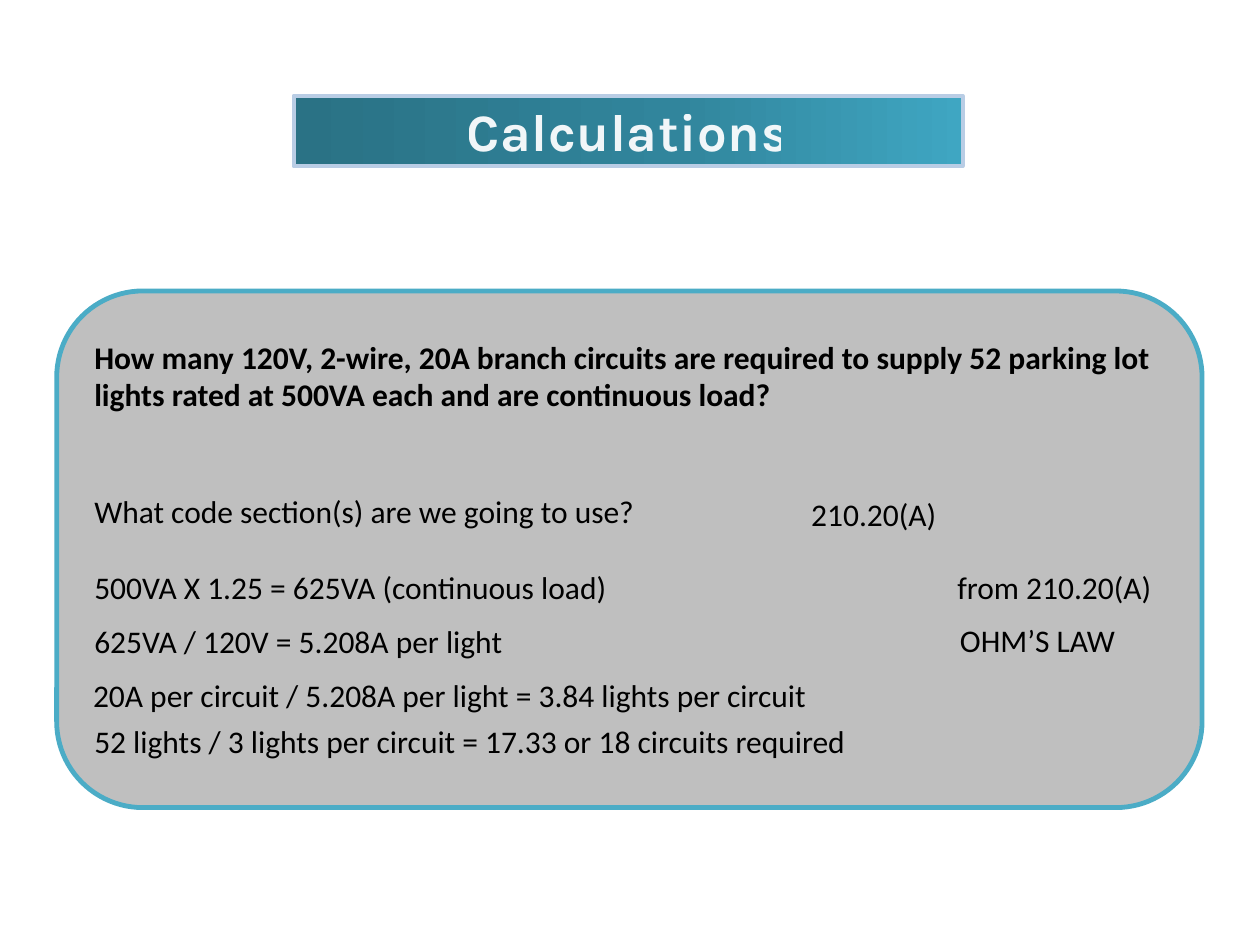
"""Build the branch circuit calculation slide."""
from copy import deepcopy
from typing import NamedTuple

from lxml.etree import SubElement
from pptx import Presentation
from pptx.dml.color import RGBColor
from pptx.enum.shapes import MSO_SHAPE as Preset
from pptx.enum.text import MSO_ANCHOR as Anchor, MSO_AUTO_SIZE as AutoSize, PP_ALIGN as Align
from pptx.oxml.ns import qn
from pptx.util import Inches, Pt


class Note(NamedTuple):
    """A line of the worked answer and its place in inches."""
    text: str
    left: float
    top: float
    width: float
    height: float = 0.4
    bold: bool = False
    wrap: bool = True


NOTES = [
    Note("How many 120V, 2-wire, 20A branch circuits are required to supply 52 parking lot "
         "lights rated at 500VA each and are continuous load?", 0.65, 2.63, 8.67, 0.71, bold=True),
    Note("What code section(s) are we going to use?", 0.65, 3.86, 5.29),
    Note("210.20(A)", 6.34, 3.88, 3.2),
    Note("500VA X 1.25 = 625VA (continuous load)", 0.65, 4.46, 4.85),
    Note("from 210.20(A)", 7.5, 4.46, 1.9, wrap=False),
    Note("625VA / 120V = 5.208A per light", 0.65, 4.89, 6.62),
    Note("OHM’S LAW", 7.52, 4.88, 1.62, wrap=False),
    Note("20A per circuit / 5.208A per light = 3.84 lights per circuit", 0.64, 5.32, 7.43),
    Note("52 lights / 3 lights per circuit = 17.33 or 18 circuits required", 0.65, 5.68, 7.23),
]
BANNER_STOPS = [(0.01, "2A7285"), (0.57, "31859C"), (1, "3FA6C2")]


def color(value: str) -> RGBColor:
    """Turn a hex string into a colour."""
    return RGBColor.from_string(value)


def style_line(shape, value: str, width: float) -> None:
    """Set the outline colour and width of a shape."""
    shape.line.color.rgb = color(value)
    shape.line.width = Pt(width)


def style_font(font, name: str, size: float, value: str, bold: bool) -> None:
    """Set the face, size, colour and weight of a font."""
    font.name, font.size, font.bold = name, Pt(size), bold
    font.color.rgb = color(value)


def fill_banner(fill, gradient_list_owner) -> None:
    """Fill the banner with its left-to-right gradient."""
    fill.gradient()
    fill.gradient_angle = 0
    stop_list = next(gradient_list_owner.iter(qn("a:gsLst")))
    stop_list.append(deepcopy(stop_list[-1]))
    for stop, (position, value) in zip(fill.gradient_stops, BANNER_STOPS):
        stop.position = position
        stop.color.rgb = color(value)


def draw_banner(slide, text: str) -> None:
    """Turn the title placeholder into the gradient banner."""
    banner = slide.shapes.title
    banner.left, banner.top = Inches(2.33), Inches(0.76)
    banner.width, banner.height = Inches(5.31), Inches(0.56)
    fill_banner(banner.fill, banner.element)
    style_line(banner, "B9CDE5", 2.25)
    frame = banner.text_frame
    frame.text = text
    frame.auto_size = AutoSize.NONE
    frame.vertical_anchor = Anchor.MIDDLE
    heading = frame.paragraphs[0]
    heading.alignment = Align.CENTER
    run = heading.runs[0]
    style_font(run.font, "Karla", 30, "FCFDFE", True)
    properties = run.font._element
    properties.set("spc", "40")
    SubElement(next(properties.iter(qn("a:srgbClr"))), qn("a:alpha"), val="95000")


def draw_panel(slide) -> None:
    """Draw the rounded grey panel behind the answer."""
    panel = slide.shapes.add_shape(
        Preset.ROUNDED_RECTANGLE, Inches(0.45), Inches(2.31), Inches(9.09), Inches(4.1))
    panel.shadow.inherit = False
    panel.fill.solid()
    panel.fill.fore_color.rgb = color("BFBFBF")
    style_line(panel, "4BACC6", 2.75)


def draw_note(slide, note: Note) -> None:
    """Write one line of the answer."""
    frame = slide.shapes.add_textbox(
        Inches(note.left), Inches(note.top), Inches(note.width), Inches(note.height)).text_frame
    frame.text = note.text
    frame.word_wrap = note.wrap
    frame.auto_size = AutoSize.SHAPE_TO_FIT_TEXT
    style_font(frame.paragraphs[0].runs[0].font, "Calibri", 18, "000000", note.bold)


def main() -> None:
    """Assemble and save the slide."""
    deck = Presentation()
    deck.slide_width, deck.slide_height = Inches(10), Inches(7.5)
    slide = deck.slides.add_slide(deck.slide_layouts.get_by_name("Title Only"))
    draw_panel(slide)
    draw_banner(slide, "Calculations")
    for note in NOTES:
        draw_note(slide, note)
    deck.save("out.pptx")


if __name__ == "__main__":
    main()
